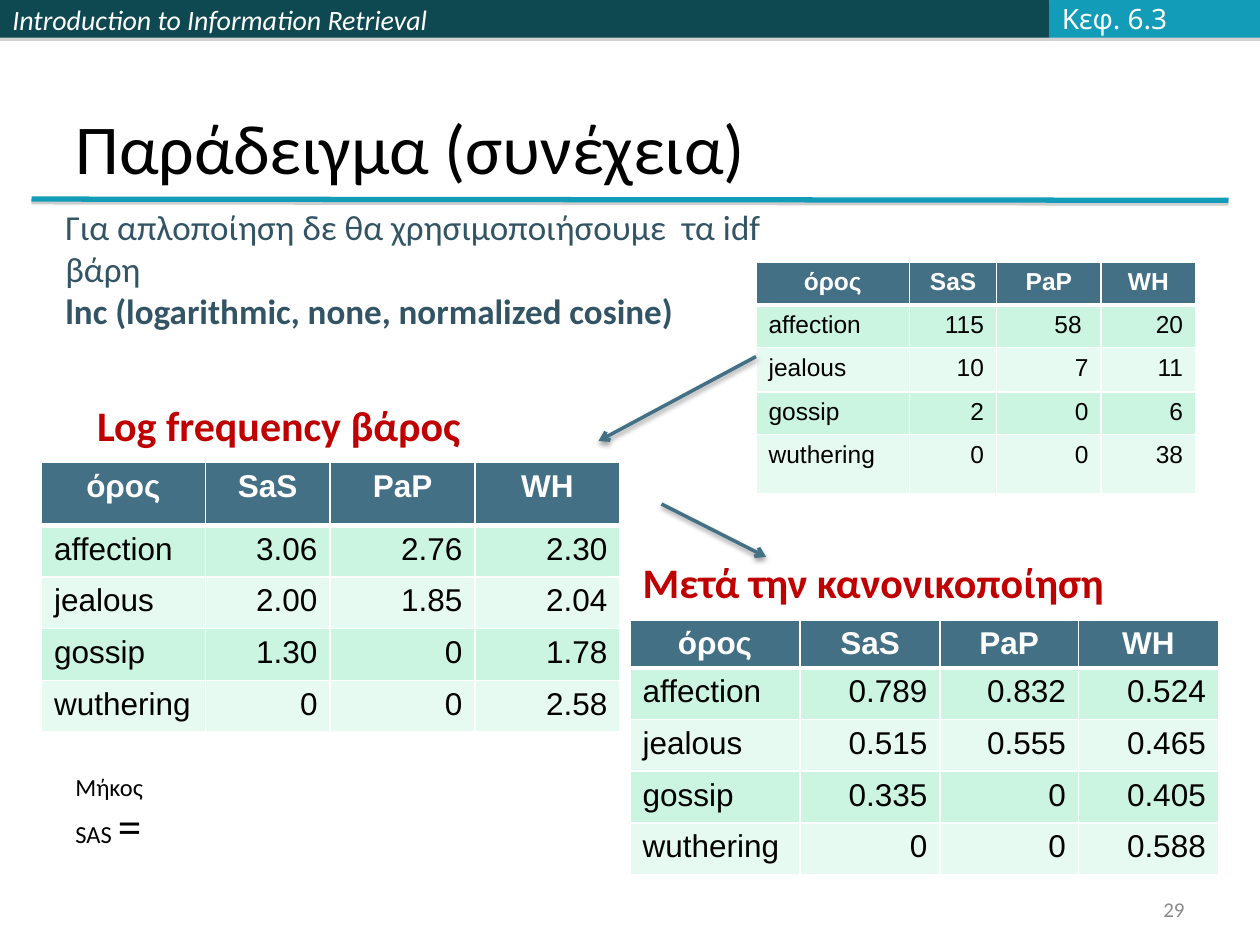
from dataclasses import dataclass

from lxml import etree
from pptx import Presentation
from pptx.dml.color import RGBColor
from pptx.enum.shapes import MSO_CONNECTOR, MSO_SHAPE
from pptx.enum.text import MSO_ANCHOR, MSO_AUTO_SIZE, PP_ALIGN
from pptx.oxml.ns import qn
from pptx.util import Inches, Pt

LEFT, CENTER, RIGHT = PP_ALIGN.LEFT, PP_ALIGN.CENTER, PP_ALIGN.RIGHT
TOP, MIDDLE, BOTTOM = MSO_ANCHOR.TOP, MSO_ANCHOR.MIDDLE, MSO_ANCHOR.BOTTOM
NO_AUTOSIZE = MSO_AUTO_SIZE.NONE
RECTANGLE = MSO_SHAPE.RECTANGLE
STRAIGHT = MSO_CONNECTOR.STRAIGHT
COMPARISON_LAYOUT = 4


@dataclass(frozen=True)
class Theme:
    sans: str = "Calibri"
    symbols: str = "Noto Sans"
    table_font: str = "Arial"
    black: str = "000000"
    white: str = "FFFFFF"
    chapter_text: str = "FBFCFF"
    gray: str = "898989"
    shadow: str = "808080"
    dark_teal: str = "0E4851"
    teal: str = "139CB7"
    slate: str = "437085"
    intro: str = "325464"
    red: str = "C00000"
    bands: tuple = ("CBF5E1", "E7FAF1")
    title: int = 40
    heading: int = 24
    body: int = 20
    table: int = 18
    banner: int = 16
    small: int = 14
    number: int = 12


THEME = Theme()
TERMS = ("affection", "jealous", "gossip", "wuthering")
HEADER = ("όρος", "SaS", "PaP", "WH")
COUNTS = (("115", "58 ", "20"), ("10", "7", "11"), ("2", "0", "6"), ("0", "0", "38"))
LOG_WEIGHTS = (("3.06", "2.76", "2.30"), ("2.00", "1.85", "2.04"),
               ("1.30", "0", "1.78"), ("0", "0", "2.58"))
NORMALIZED = (("0.789", "0.832", "0.524"), ("0.515", "0.555", "0.465"),
              ("0.335", "0", "0.405"), ("0", "0", "0.588"))


def inches(*lengths):
    return [Inches(length) for length in lengths]


def add_span(para, text, color, **formats):
    span = para.add_run()
    span.text = text
    for name, value in formats.items():
        setattr(span.font, name, value)
    span.font.color.rgb = RGBColor.from_string(color)


def set_frame(frame, anchor, wrap=True):
    settings = {"word_wrap": wrap, "auto_size": NO_AUTOSIZE, "vertical_anchor": anchor}
    for name, value in settings.items():
        setattr(frame, name, value)


def set_shadow(shape, color, alpha, blur, distance):
    """Give the shape a shadow straight below it; alpha is in percent."""
    properties = shape.element.spPr
    for effects in properties.findall(qn("a:effectLst")):
        properties.remove(effects)
    effects = etree.SubElement(properties, qn("a:effectLst"))
    outer = etree.SubElement(effects, qn("a:outerShdw"), blurRad=str(Pt(blur)),
                             dist=str(Pt(distance)), dir="5400000", rotWithShape="0")
    tint = etree.SubElement(outer, qn("a:srgbClr"), val=color)
    etree.SubElement(tint, qn("a:alpha"), val=str(alpha * 1000))


def add_banner(page, left, width, color):
    box = page.shapes.add_shape(RECTANGLE, *inches(left, 0, width, 0.3))
    box.fill.solid()
    box.fill.fore_color.rgb = RGBColor.from_string(color)
    box.line.fill.background()
    set_shadow(box, THEME.shadow, 35, 0, 1.8)
    set_frame(box.text_frame, MIDDLE)
    return box


def add_line(page, start, end, color, width, shadow):
    line = page.shapes.add_connector(STRAIGHT, *inches(*start, *end))
    line.line.color.rgb = RGBColor.from_string(color)
    line.line.width = Pt(width)
    set_shadow(line, *shadow)
    return line


def add_arrow(page, start, end):
    arrow = add_line(page, start, end, THEME.slate, 2, (THEME.black, 38, 3.1, 1.6))
    etree.SubElement(arrow.line._get_or_add_ln(), qn("a:tailEnd"), type="arrow")


def add_text(page, place, paragraphs, anchor=TOP, align=LEFT, wrap=True):
    """Each paragraph is a list of (text, color, formats) spans."""
    frame = page.shapes.add_textbox(*inches(*place)).text_frame
    set_frame(frame, anchor, wrap)
    for index, spans in enumerate(paragraphs):
        para = frame.add_paragraph() if index else frame.paragraphs[0]
        para.alignment = align
        for text, color, formats in spans:
            add_span(para, text, color, **formats)


def fill_placeholder(page, index, place, text, color, **formats):
    box = page.placeholders[index]
    for name, value in zip(("left", "top", "width", "height"), inches(*place)):
        setattr(box, name, value)
    set_frame(box.text_frame, BOTTOM)
    para = box.text_frame.paragraphs[0]
    para.alignment = LEFT
    add_span(para, text, color, name=THEME.sans, **formats)


def set_borders(cell, top, bottom):
    properties = cell._tc.get_or_add_tcPr()
    for side, width in (("L", 1), ("R", 1), ("T", top), ("B", bottom)):
        border = etree.SubElement(properties, qn(f"a:ln{side}"), w=str(Pt(width)))
        fill = etree.SubElement(border, qn("a:solidFill"))
        etree.SubElement(fill, qn("a:srgbClr"), val=THEME.white)


def format_cell(cell, text, row, column, size):
    header = row == 0
    set_borders(cell, 3 if row == 1 else 1, 3 if header else 1)
    cell.fill.solid()
    color = THEME.slate if header else THEME.bands[(row - 1) % 2]
    cell.fill.fore_color.rgb = RGBColor.from_string(color)
    para = cell.text_frame.paragraphs[0]
    para.alignment = CENTER if header else RIGHT if column else LEFT
    add_span(para, text, THEME.white if header else THEME.black,
             name=THEME.table_font, size=Pt(size), bold=header)


def add_term_table(page, left, top, widths, heights, values, size):
    rows = [HEADER] + [(term, *numbers) for term, numbers in zip(TERMS, values)]
    place = inches(left, top, sum(widths), sum(heights))
    table = page.shapes.add_table(len(rows), len(HEADER), *place).table
    for column, width in zip(table.columns, widths):
        column.width = Inches(width)
    for row, height in zip(table.rows, heights):
        row.height = Inches(height)
    for r, texts in enumerate(rows):
        for c, text in enumerate(texts):
            format_cell(table.cell(r, c), text, r, c, size)


def add_frame(page):
    course = add_banner(page, 0, 4.08, THEME.dark_teal)
    para = course.text_frame.paragraphs[0]
    para.alignment = LEFT
    add_span(para, "Introduction to Information Retrieval", THEME.white,
             name=THEME.sans, size=Pt(THEME.banner), italic=True)
    add_banner(page, 4.08, 4.25, THEME.dark_teal)
    add_banner(page, 8.33, 1.67, THEME.teal)
    add_line(page, (0.25, 1.58), (9.75, 1.59), THEME.teal, 3, (THEME.shadow, 38, 0, 1.6))
    chapter = {"name": THEME.symbols, "size": Pt(THEME.banner)}
    add_text(page, (8.33, -0.04, 1.1, 0.37), [[("Κεφ. 6.3", THEME.chapter_text, chapter)]],
             MIDDLE, wrap=False)
    number = {"name": THEME.sans, "size": Pt(THEME.number)}
    add_text(page, (7.17, 7.08, 2.33, 0.27), [[("29", THEME.gray, number)]], MIDDLE, RIGHT)


def main():
    deck = Presentation()
    deck.slide_width, deck.slide_height = inches(10, 7.5)
    page = deck.slides.add_slide(deck.slide_layouts[COMPARISON_LAYOUT])
    add_frame(page)
    fill_placeholder(page, 0, (0.5, 0.3, 9, 1.25), "Παράδειγμα (συνέχεια)",
                     THEME.black, size=Pt(THEME.title))
    heading = {"size": Pt(THEME.heading), "bold": True}
    fill_placeholder(page, 1, (0.67, 2.92, 4.42, 0.7), "Log frequency βάρος",
                     THEME.red, **heading)
    fill_placeholder(page, 3, (5, 4.17, 4.42, 0.7), "Μετά την κανονικοποίηση",
                     THEME.red, **heading)
    for box in list(page.placeholders):
        if not box.text_frame.text:
            box.element.getparent().remove(box.element)

    add_term_table(page, 0.33, 3.67, (1.3, 0.99, 1.15, 1.15),
                   [0.5] + [0.41] * 4, LOG_WEIGHTS, THEME.table)
    add_term_table(page, 5, 4.92, (1.35, 1.11, 1.1, 1.11),
                   [0.38] + [0.41] * 4, NORMALIZED, THEME.table)
    add_term_table(page, 6, 2.08, (1.22, 0.69, 0.83, 0.75),
                   (0.34, 0.34, 0.35, 0.34, 0.47), COUNTS, THEME.small)

    body = {"name": THEME.sans, "size": Pt(THEME.body)}
    add_text(page, (0.42, 1.58, 5.92, 1.11), [
        [("Για απλοποίηση δε θα χρησιμοποιήσουμε  τα idf βάρη", THEME.intro, body)],
        [("lnc (logarithmic, none, normalized cosine)", THEME.intro, {**body, "bold": True})],
    ])
    add_text(page, (0.5, 6.08, 0.83, 0.74), [[
        ("Μήκος SAS ", THEME.black, {"name": THEME.sans, "size": Pt(THEME.small)}),
        ("=", THEME.black, {"name": THEME.symbols, "size": Pt(THEME.heading)}),
    ]])
    add_arrow(page, (6, 2.83), (4.75, 3.5))
    add_arrow(page, (5.25, 4), (6.08, 4.42))
    deck.save("out.pptx")


if __name__ == "__main__":
    main()
